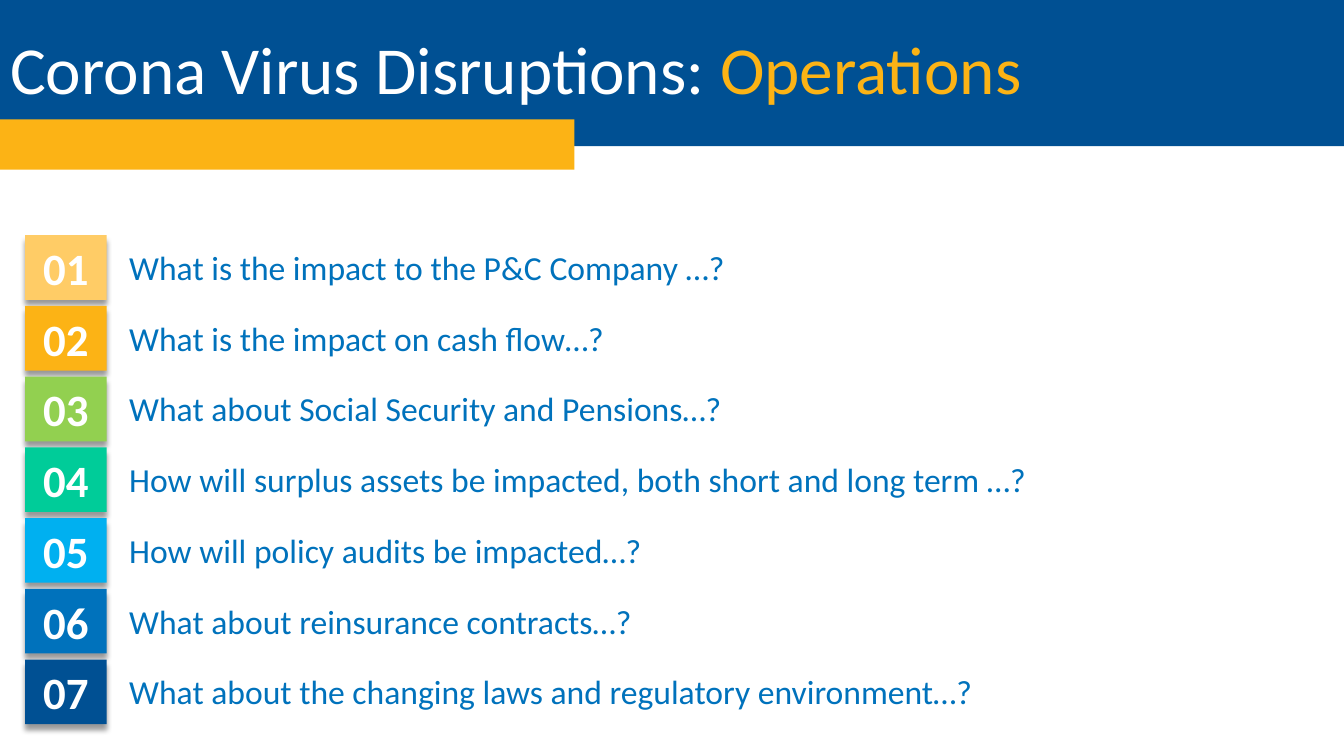
import pptx
import pptx.dml.color
import pptx.enum.shapes
import pptx.enum.text
import pptx.oxml
import pptx.oxml.ns
import pptx.util

RGB = pptx.dml.color.RGBColor
WHITE = RGB(0xFF, 0xFF, 0xFF)
NAVY = RGB(0x00, 0x50, 0x93)
BLUE = RGB(0x00, 0x72, 0xBC)
SKY = RGB(0x00, 0xB0, 0xF0)
TEAL = RGB(0x00, 0xCC, 0x99)
GREEN = RGB(0x92, 0xD0, 0x50)
AMBER = RGB(0xFC, 0xB3, 0x15)
SAND = RGB(0xFF, 0xCC, 0x66)

COLS, ROWS = 160, 90
FIRST_ROW, ROW_STEP = 28, 8.42
SHORT, LONG = 82.2, 112.4

QUESTIONS = [
    ("What is the impact to the P&C Company …?", SAND, SHORT),
    ("What is the impact on cash flow…?", AMBER, SHORT),
    ("What about Social Security and Pensions…?", GREEN, SHORT),
    ("How will surplus assets be impacted, both short and long term …?", TEAL, LONG),
    ("How will policy audits be impacted…?", SKY, LONG),
    ("What about reinsurance contracts…?", BLUE, LONG),
    ("What about the changing laws and regulatory environment…?", NAVY, LONG),
]

SHADOW = (
    '<a:outerShdw %s blurRad="50800" dist="50800" dir="5400000" algn="t" rotWithShape="0">'
    '<a:srgbClr val="000000"><a:alpha val="40000"/></a:srgbClr></a:outerShdw>'
    % pptx.oxml.ns.nsdecls("a")
)


class SlideBuilder:
    """Places elements on a grid of COLS by ROWS cells in one type style."""

    font = "Calibri"

    def __init__(self, prs):
        self.cell_w = prs.slide_width / COLS
        self.cell_h = prs.slide_height / ROWS
        self.slide = prs.slides.add_slide(prs.slide_layouts[5])

    def box(self, col, row, cols, rows):
        """Turn grid cells into left, top, width and height."""
        return (round(col * self.cell_w), round(row * self.cell_h),
                round(cols * self.cell_w), round(rows * self.cell_h))

    def add_run(self, p, text, size, color, bold=False):
        r = p.add_run()
        r.text = text
        r.font.name = self.font
        r.font.size = pptx.util.Pt(size)
        r.font.bold = bold
        r.font.color.rgb = color

    def title(self, parts, *cells):
        sp = self.slide.shapes.title
        sp.left, sp.top, sp.width, sp.height = self.box(*cells)
        tf = sp.text_frame
        tf.auto_size = pptx.enum.text.MSO_AUTO_SIZE.NONE
        tf.vertical_anchor = pptx.enum.text.MSO_ANCHOR.MIDDLE
        p = tf.paragraphs[0]
        p.alignment = pptx.enum.text.PP_ALIGN.LEFT
        p.line_spacing = 0.9
        for text, color in parts:
            self.add_run(p, text, 48, color)
        return sp

    def bar(self, color, *cells):
        sp = self.slide.shapes.add_shape(
            pptx.enum.shapes.MSO_SHAPE.RECTANGLE, *self.box(*cells))
        sp.fill.solid()
        sp.fill.fore_color.rgb = color
        sp.line.fill.background()
        sp.shadow.inherit = False
        return sp

    def number(self, text, color, *cells):
        sp = self.bar(color, *cells)
        effects = sp.element.spPr.find(pptx.oxml.ns.qn("a:effectLst"))
        effects.append(pptx.oxml.parse_xml(SHADOW))
        tf = sp.text_frame
        tf.word_wrap = True
        tf.auto_size = pptx.enum.text.MSO_AUTO_SIZE.SHAPE_TO_FIT_TEXT
        p = tf.paragraphs[0]
        p.alignment = pptx.enum.text.PP_ALIGN.CENTER
        self.add_run(p, text, 32, WHITE, bold=True)

    def label(self, text, *cells):
        tf = self.slide.shapes.add_textbox(*self.box(*cells)).text_frame
        tf.word_wrap = True
        tf.auto_size = pptx.enum.text.MSO_AUTO_SIZE.SHAPE_TO_FIT_TEXT
        self.add_run(tf.paragraphs[0], text, 24, BLUE)


def main():
    prs = pptx.Presentation()
    prs.slide_width = pptx.util.Inches(13.33)
    prs.slide_height = pptx.util.Inches(7.5)
    builder = SlideBuilder(prs)

    title = builder.title(
        [("Corona Virus Disruptions: ", WHITE), ("Operations", AMBER)],
        0, 0, 138, 17.4)
    header = builder.bar(NAVY, 0, 0, COLS, 17.4)
    title.element.addprevious(header.element)  # header goes behind the title
    builder.bar(AMBER, 0, 14.2, 68.4, 6)

    for i, (question, color, width) in enumerate(QUESTIONS):
        row = FIRST_ROW + i * ROW_STEP
        builder.number(f"{i + 1:02d}", color, 3, row, 9.7, 7.7)
        builder.label(question, 14.2, row + 0.8, width, 6)

    prs.save("out.pptx")


if __name__ == "__main__":
    main()
